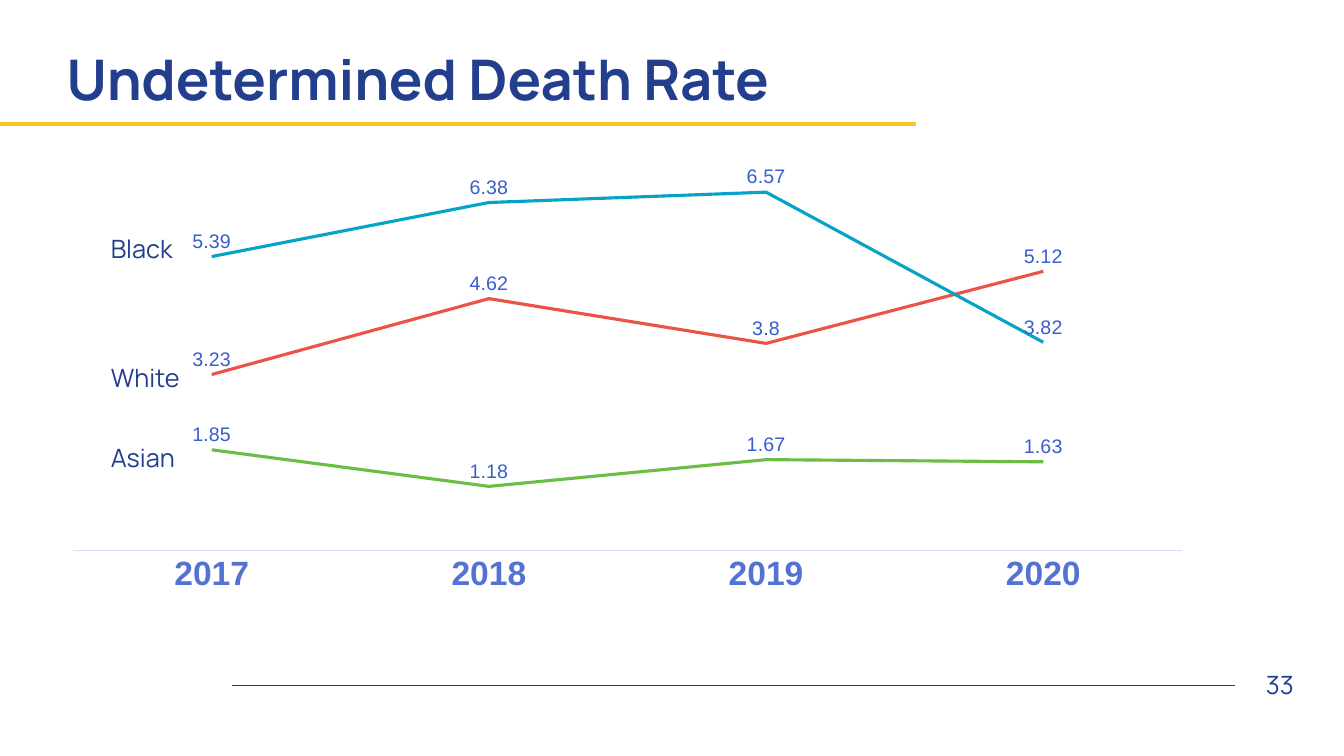
from dataclasses import dataclass

from lxml import etree
from pptx import Presentation
from pptx import util as u
from pptx.chart.data import CategoryChartData
from pptx.dml.color import RGBColor
from pptx.enum import chart as ch
from pptx.enum import shapes, text
from pptx.oxml.ns import qn

NAVY = "243E8E"
GOLD = "F7C327"
AXIS_LINE = "D7DFF5"
YEAR_BLUE = "5372D3"
VALUE_BLUE = "385DCD"
HEADING_FONT = "Manrope"
CHART_FONT = "Arial"


@dataclass
class Rule:
    left: float
    right: float
    y: float
    color: str
    weight: float


@dataclass
class Rate:
    name: str
    values: tuple[float, ...]
    color: str


@dataclass
class Label:
    words: str
    left: float
    top: float
    width: float
    align: text.PP_ALIGN = text.PP_ALIGN.LEFT
    anchor: text.MSO_ANCHOR = text.MSO_ANCHOR.TOP


YEARS = ("2017", "2018", "2019", "2020")
RULES = (
    Rule(2.3, 12.25, 6.8, NAVY, 1),
    Rule(-0.11, 9.09, 1.23, GOLD, 3),
)
RATES = (
    Rate("Series 1", (3.23, 4.62, 3.8, 5.12), "EB5347"),
    Rate("Series 2", (5.39, 6.38, 6.57, 3.82), "06A3C9"),
    Rate("Series 3", (1.85, 1.18, 1.67, 1.63), "6CBD45"),
)
LABELS = (
    Label("White", 1, 3.55, 0.95),
    Label("Black", 1, 2.27, 0.95),
    Label("Asian", 1, 4.34, 0.95),
    Label("33", 12.25, 6.59, 0.68, text.PP_ALIGN.RIGHT, text.MSO_ANCHOR.MIDDLE),
)


def paint(color_format, hex_color: str) -> None:
    color_format.rgb = RGBColor.from_string(hex_color)


def style_font(font, name: str, size: float, color: str, bold: bool = False) -> None:
    font.name = name
    font.size = u.Pt(size)
    font.bold = bold
    paint(font.color, color)


def style_line(line, color: str, weight: float) -> None:
    paint(line.color, color)
    line.width = u.Pt(weight)


def draw_rule(slide, rule: Rule) -> None:
    y = u.Inches(rule.y)
    connector = slide.shapes.add_connector(
        shapes.MSO_CONNECTOR.STRAIGHT, u.Inches(rule.left), y, u.Inches(rule.right), y)
    style_line(connector.line, rule.color, rule.weight)
    etree.SubElement(connector._element.spPr, qn("a:effectLst"))


def draw_label(slide, label: Label) -> None:
    box = slide.shapes.add_textbox(
        u.Inches(label.left), u.Inches(label.top), u.Inches(label.width), u.Inches(0.4))
    frame = box.text_frame
    frame.word_wrap = True
    frame.vertical_anchor = label.anchor
    paragraph = frame.paragraphs[0]
    paragraph.text = label.words
    paragraph.alignment = label.align
    style_font(paragraph.font, HEADING_FONT, 18, NAVY)


def write_title(slide, words: str) -> None:
    title = slide.shapes.title
    title.left, title.top = u.Inches(0.48), u.Inches(0.4)
    title.width, title.height = u.Inches(11.94), u.Inches(0.83)
    frame = title.text_frame
    frame.auto_size = text.MSO_AUTO_SIZE.NONE
    frame.vertical_anchor = text.MSO_ANCHOR.MIDDLE
    frame.margin_left = u.Inches(0.18)
    heading = frame.paragraphs[0]
    heading.text = words
    heading.alignment = text.PP_ALIGN.LEFT
    heading.line_spacing = 0.9
    style_font(heading.font, HEADING_FONT, 40, NAVY, bold=True)


def place_plot(chart, x: float, y: float, width: float, height: float) -> None:
    """Fix the inner plot area, in fractions of the chart."""
    plot_area = chart._chartSpace.chart.plotArea
    for old in plot_area.findall(qn("c:layout")):
        plot_area.remove(old)
    layout = etree.Element(qn("c:layout"))
    manual = etree.SubElement(layout, qn("c:manualLayout"))
    settings = (("layoutTarget", "inner"), ("xMode", "edge"), ("yMode", "edge"),
                ("x", x), ("y", y), ("w", width), ("h", height))
    for tag, value in settings:
        etree.SubElement(manual, qn(f"c:{tag}")).set("val", str(value))
    plot_area.insert(0, layout)


def draw_chart(slide) -> None:
    data = CategoryChartData()
    data.categories = YEARS
    for rate in RATES:
        data.add_series(rate.name, rate.values)
    chart = slide.shapes.add_chart(
        ch.XL_CHART_TYPE.LINE, u.Inches(0.72), u.Inches(1.47),
        u.Inches(12.13), u.Inches(5.23), data).chart
    chart.has_legend = False
    chart.has_title = False
    style_font(chart.font, CHART_FONT, 10, NAVY)
    place_plot(chart, 0, 0.039, 0.907, 0.725)

    # Axes
    year_axis, rate_axis = chart.category_axis, chart.value_axis
    year_axis.major_tick_mark = ch.XL_TICK_MARK.NONE
    year_axis.has_major_gridlines = False
    style_font(year_axis.tick_labels.font, CHART_FONT, 24, YEAR_BLUE, bold=True)
    style_line(year_axis.format.line, AXIS_LINE, 0.75)
    rate_axis.minimum_scale, rate_axis.maximum_scale = 0, 7
    rate_axis.has_major_gridlines = False
    rate_axis.visible = False

    # Lines and their values
    chart.plots[0].vary_by_categories = False
    for series, rate in zip(chart.plots[0].series, RATES):
        series.smooth = False
        series.marker.style = ch.XL_MARKER_STYLE.NONE
        style_line(series.format.line, rate.color, 2.25)
        values = series.data_labels
        values.show_value = True
        values.position = ch.XL_LABEL_POSITION.ABOVE
        style_font(values.font, CHART_FONT, 14, VALUE_BLUE)


def main() -> None:
    deck = Presentation()
    deck.slide_width, deck.slide_height = u.Inches(13.33), u.Inches(7.5)
    slide = deck.slides.add_slide(deck.slide_layouts.get_by_name("Title Only"))

    # Rules and title
    for rule in RULES:
        draw_rule(slide, rule)
    write_title(slide, "Undetermined Death Rate")

    # Chart, line names and page number
    draw_chart(slide)
    for label in LABELS:
        draw_label(slide, label)

    deck.save("out.pptx")


if __name__ == "__main__":
    main()
